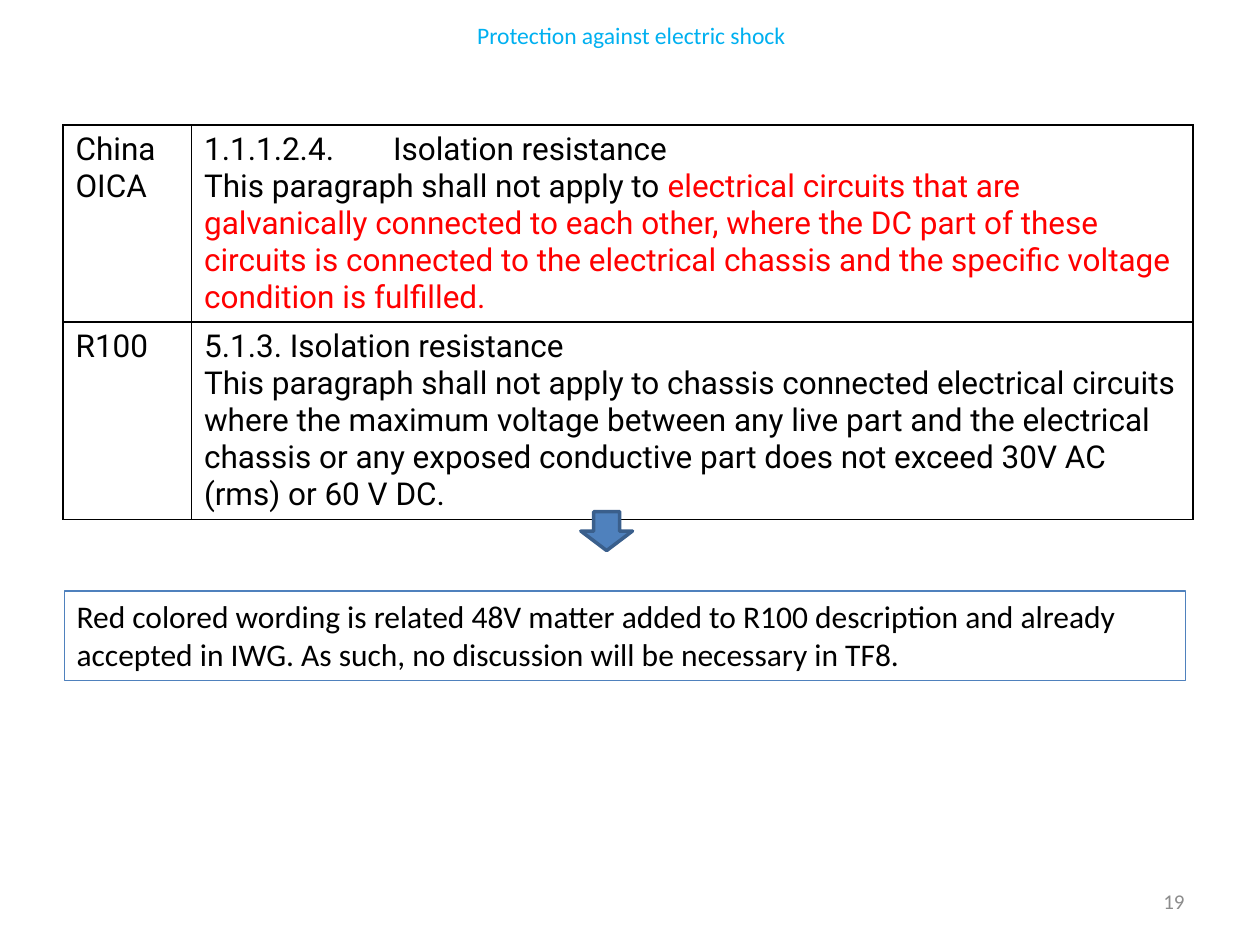
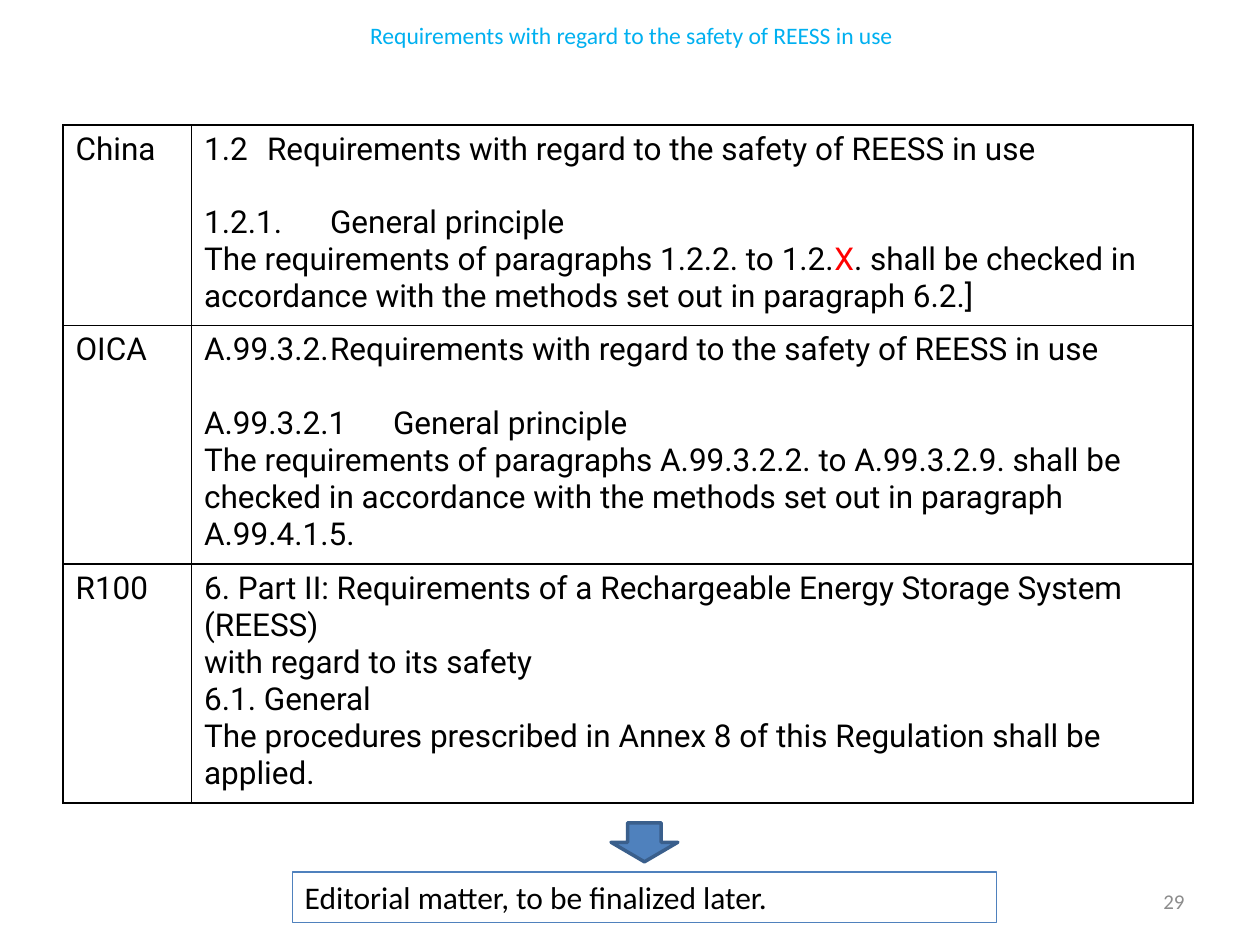
from dataclasses import dataclass

from lxml import etree
from pptx import Presentation
from pptx.dml.color import RGBColor
from pptx.enum.shapes import MSO_SHAPE
from pptx.enum.text import MSO_ANCHOR, PP_ALIGN
from pptx.oxml.ns import qn
from pptx.util import Inches, Pt

RECTANGLE = MSO_SHAPE.RECTANGLE
DOWN_ARROW = MSO_SHAPE.DOWN_ARROW
TOP, MIDDLE = MSO_ANCHOR.TOP, MSO_ANCHOR.MIDDLE
LEFT, CENTER, RIGHT = PP_ALIGN.LEFT, PP_ALIGN.CENTER, PP_ALIGN.RIGHT

BLACK, RED, BLUE, DARK_BLUE = "000000", "FF0000", "4F81BD", "3A5F8C"
TITLE_FORMAT = {"name": "Calibri", "size": Pt(13.5), "color": "00B0F0"}
NUMBER_FORMAT = {"name": "Calibri", "size": Pt(12), "color": "8C8C8C"}
NOTE_FORMAT = {"name": "Calibri", "size": Pt(18), "color": BLACK}
CELL_FORMAT = {"name": "Roboto", "size": Pt(18), "color": BLACK}
COLUMN_WIDTHS = (1.02, 7.95)
LINE_HEIGHT = 0.29
CELL_PADDING = 0.1
SECTION_GAP = 21


@dataclass
class Line:
    runs: list
    space_before: float = 0


def color(hex_value):
    return RGBColor.from_string(hex_value)


def format_font(font, values):
    for name, value in values.items():
        if name == "color":
            font.color.rgb = color(value)
        else:
            setattr(font, name, value)


def write_lines(text_frame, lines, font_format, alignment=LEFT, anchor=TOP):
    text_frame.word_wrap = True
    text_frame.vertical_anchor = anchor
    for index, line in enumerate(lines):
        paragraph = text_frame.paragraphs[0] if index == 0 else text_frame.add_paragraph()
        paragraph.alignment = alignment
        if line.space_before:
            paragraph.space_before = Pt(line.space_before)
        for text, run_color in line.runs:
            run = paragraph.add_run()
            run.text = text
            format_font(run.font, {**font_format, "color": run_color or font_format["color"]})


def plain(text, space_before=0):
    return Line([(text, None)], space_before)


def add_label(slide, position, text, font_format, alignment):
    label = slide.shapes.add_textbox(*map(Inches, position))
    write_lines(label.text_frame, [plain(text)], font_format, alignment, MIDDLE)


def add_outlined_shape(slide, kind, position, line_color, line_width):
    shape = slide.shapes.add_shape(kind, *map(Inches, position))
    shape.shadow.inherit = False
    shape.line.color.rgb = color(line_color)
    shape.line.width = Pt(line_width)
    return shape


def add_note(slide, position, text):
    note = add_outlined_shape(slide, RECTANGLE, position, BLUE, 0.75)
    note.fill.background()
    write_lines(note.text_frame, [plain(text)], NOTE_FORMAT)


def add_arrow(slide, position):
    arrow = add_outlined_shape(slide, DOWN_ARROW, position, DARK_BLUE, 2)
    arrow.fill.solid()
    arrow.fill.fore_color.rgb = color(BLUE)


def set_borders(cell):
    properties = cell._tc.get_or_add_tcPr()
    for index, side in enumerate(("a:lnL", "a:lnR", "a:lnT", "a:lnB")):
        border = etree.Element(qn(side), w=str(Pt(1)))
        fill = etree.SubElement(border, qn("a:solidFill"))
        etree.SubElement(fill, qn("a:srgbClr"), val=BLACK)
        properties.insert(index, border)


def add_comparison(slide, rows):
    heights = [count * LINE_HEIGHT + CELL_PADDING for _, _, count in rows]
    table = slide.shapes.add_table(
        len(rows), len(COLUMN_WIDTHS), Inches(0.5), Inches(0.99),
        Inches(sum(COLUMN_WIDTHS)), Inches(sum(heights)),
    ).table
    table.first_row = False
    table.horz_banding = False
    for column, width in zip(table.columns, COLUMN_WIDTHS):
        column.width = Inches(width)
    for row, height, (sources, requirement, _) in zip(table.rows, heights, rows):
        row.height = Inches(height)
        for cell, lines in zip(row.cells, (map(plain, sources), requirement)):
            cell.fill.background()
            set_borders(cell)
            write_lines(cell.text_frame, lines, CELL_FORMAT)


def add_page(presentation, title, number, rows):
    slide = presentation.slides.add_slide(presentation.slide_layouts[6])
    add_comparison(slide, rows)
    add_label(slide, (7.17, 6.95, 2.33, 0.4), number, NUMBER_FORMAT, RIGHT)
    add_label(slide, (0.51, 0.13, 9, 0.3), title, TITLE_FORMAT, CENTER)
    return slide


def add_shock_protection(presentation):
    rows = [
        (["China", "OICA"], [
            plain("1.1.1.2.4.\tIsolation resistance"),
            Line([
                ("This paragraph shall not apply to ", None),
                ("electrical circuits that are galvanically connected to each other, "
                 "where the DC part of these circuits is connected to the electrical "
                 "chassis and the specific voltage condition is fulfilled.", RED),
            ]),
        ], 5),
        (["R100"], [
            plain("5.1.3. Isolation resistance"),
            plain("This paragraph shall not apply to chassis connected electrical circuits "
                  "where the maximum voltage between any live part and the electrical chassis "
                  "or any exposed conductive part does not exceed 30V AC (rms) or 60 V DC."),
        ], 5),
    ]
    slide = add_page(presentation, "Protection against electric shock", "19", rows)
    add_note(slide, (0.51, 4.69, 8.9, 0.71),
             "Red colored wording is related 48V matter added to R100 description and "
             "already accepted in IWG. As such, no discussion will be necessary in TF8.")
    add_arrow(slide, (4.61, 4.06, 0.41, 0.31))


def add_reess_safety(presentation):
    title = "Requirements with regard to the safety of REESS in use"
    rows = [
        (["China"], [
            plain(f"1.2\t{title}"),
            plain("1.2.1.\tGeneral principle", SECTION_GAP),
            Line([
                ("The requirements of paragraphs 1.2.2. to 1.2.", None),
                ("X", RED),
                (". shall be checked in accordance with the methods set out in "
                 "paragraph 6.2.]", None),
            ]),
        ], 5),
        (["OICA"], [
            plain(f"A.99.3.2.\t{title}"),
            plain("A.99.3.2.1\tGeneral principle", SECTION_GAP),
            plain("The requirements of paragraphs A.99.3.2.2. to A.99.3.2.9. shall be checked "
                  "in accordance with the methods set out in paragraph A.99.4.1.5."),
        ], 6),
        (["R100"], [
            plain("6. Part II: Requirements of a Rechargeable Energy Storage System (REESS)"),
            plain("with regard to its safety"),
            plain("6.1. General"),
            plain("The procedures prescribed in Annex 8 of this Regulation shall be applied."),
        ], 6),
    ]
    slide = add_page(presentation, title, "29", rows)
    add_note(slide, (2.32, 6.92, 5.59, 0.4), "Editorial matter, to be finalized later.")
    add_arrow(slide, (4.85, 6.53, 0.53, 0.31))


def main():
    presentation = Presentation()
    presentation.slide_width = Inches(10)
    presentation.slide_height = Inches(7.5)
    add_shock_protection(presentation)
    add_reess_safety(presentation)
    presentation.save("out.pptx")


if __name__ == "__main__":
    main()
